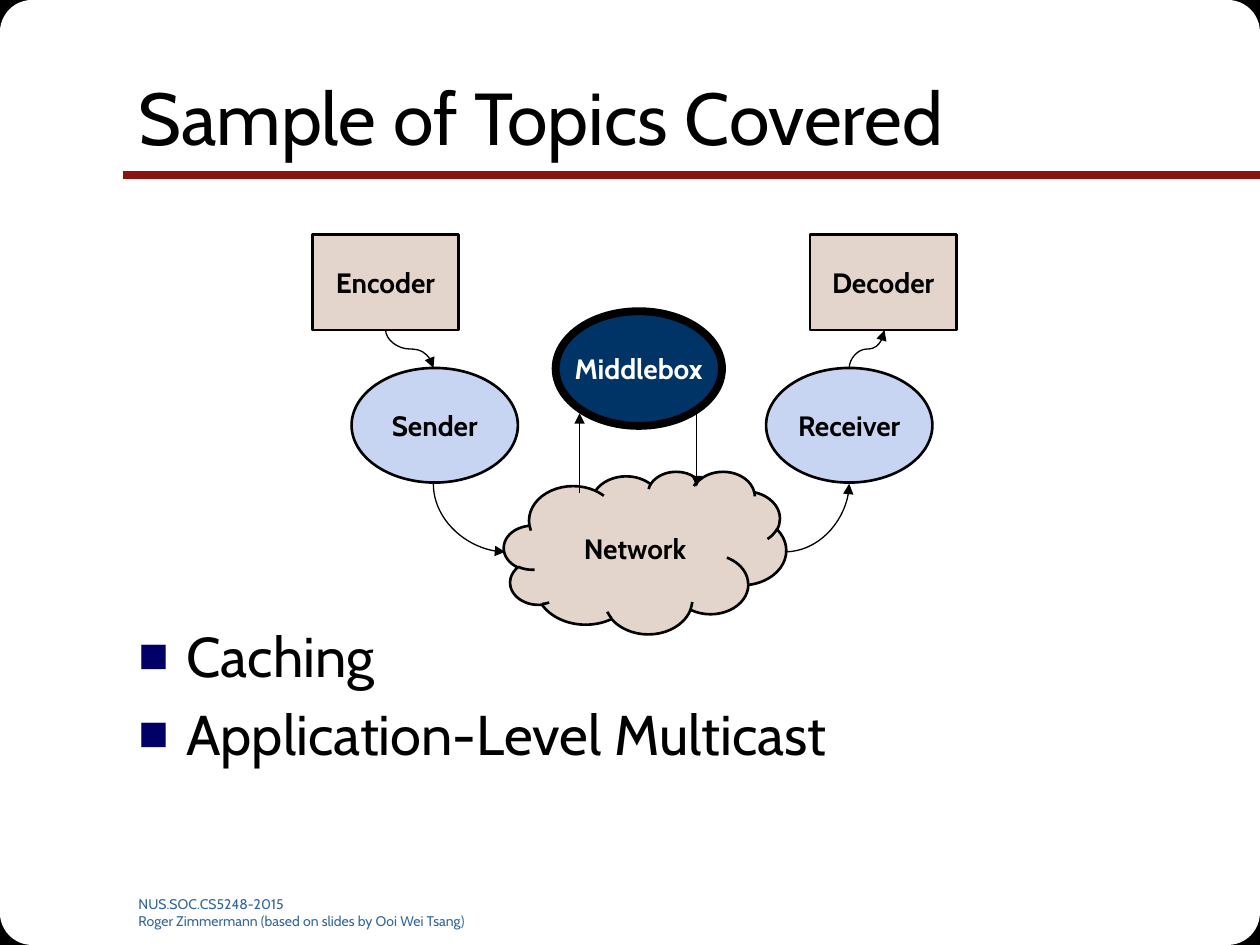
from pptx import Presentation
from pptx.dml.color import RGBColor
from pptx.enum.shapes import MSO_CONNECTOR, MSO_SHAPE
from pptx.enum.text import MSO_ANCHOR, PP_ALIGN
from pptx.oxml.ns import qn
from pptx.util import Emu, Inches, Pt
from lxml import etree

RECT, ROUND = MSO_SHAPE.RECTANGLE, MSO_SHAPE.ROUNDED_RECTANGLE
OVAL, CLOUD = MSO_SHAPE.OVAL, MSO_SHAPE.CLOUD
STRAIGHT, CURVE = MSO_CONNECTOR.STRAIGHT, MSO_CONNECTOR.CURVE
MIDDLE, TOP, CENTER = MSO_ANCHOR.MIDDLE, MSO_ANCHOR.TOP, PP_ALIGN.CENTER

COLS, ROWS = 10, 7.5
BLACK, WHITE, RED = "000000", "FFFFFF", "891411"
SAND, SKY, NAVY = "E3D4CC", "C7D5F2", "003366"
FOOTER, BULLET = "336699", "000066"


def rgb(value):
    return RGBColor.from_string(value)


class Deck:
    """Holds the style and the current slide; lengths are grid units."""
    font = "Cabin"

    def __init__(self, prs):
        self.s = prs.slides.add_slide(prs.slide_layouts[6])
        self.unit = prs.slide_width / COLS

    def grid(self, *lengths):
        return [Emu(round(n * self.unit)) for n in lengths]

    def style(self, tf, size, color, bold=False):
        for p in tf.paragraphs:
            for r in p.runs:
                r.font.name, r.font.size = self.font, Pt(size)
                r.font.bold, r.font.color.rgb = bold, rgb(color)

    def shape(self, kind, box, fill, line=None, text="", color=BLACK, width=1.5):
        sp = self.s.shapes.add_shape(kind, *self.grid(*box))
        sp.shadow.inherit = False
        sp.fill.solid()
        sp.fill.fore_color.rgb = rgb(fill)
        if line:
            sp.line.color.rgb, sp.line.width = rgb(line), Pt(width)
        else:
            sp.line.fill.background()
        if text:
            tf = sp.text_frame
            tf.text, tf.word_wrap, tf.vertical_anchor = text, False, MIDDLE
            tf.paragraphs[0].alignment = CENTER
            self.style(tf, 16, color, bold=True)
        return sp

    def text(self, box, text, size, color=BLACK, anchor=TOP):
        tf = self.s.shapes.add_textbox(*self.grid(*box)).text_frame
        tf.word_wrap, tf.vertical_anchor, tf.text = True, anchor, text
        self.style(tf, size, color)
        return tf

    def bullets(self, box, items, size):
        tf = self.text(box, "\n".join(items), size)
        for p in tf.paragraphs:
            p.space_before = Pt(size * 0.2)
            pPr = p._p.get_or_add_pPr()
            indent = Inches(0.38)
            pPr.set("marL", str(indent))
            pPr.set("indent", str(-indent))
            clr = etree.SubElement(pPr, qn("a:buClr"))
            etree.SubElement(clr, qn("a:srgbClr"), val=BULLET)
            etree.SubElement(pPr, qn("a:buSzPct"), val="90000")
            etree.SubElement(pPr, qn("a:buFont"), typeface="Arial")
            etree.SubElement(pPr, qn("a:buChar"), char="■")

    def line(self, start, end, color=BLACK, width=0.75, kind=STRAIGHT, arrow=True):
        c = self.s.shapes.add_connector(kind, *self.grid(*start, *end))
        c.line.color.rgb, c.line.width = rgb(color), Pt(width)
        etree.SubElement(c._element.spPr, qn("a:effectLst"))
        if arrow:
            etree.SubElement(c.line._get_or_add_ln(), qn("a:tailEnd"), type="triangle")
        return c

    def curve(self, start, end, bends, vertical=True):
        """Curved arrow; a vertical one leaves its start up or down."""
        c = self.line(start, end, kind=CURVE)
        spPr = c._element.spPr
        spPr.find(qn("a:prstGeom")).set("prst", f"curvedConnector{bends}")
        if vertical:
            # Turn the frame a quarter about its centre
            (x1, y1), (x2, y2) = start, end
            w, h = abs(y2 - y1), abs(x2 - x1)
            left, top = (x1 + x2 - w) / 2, (y1 + y2 - h) / 2
            c.left, c.top, c.width, c.height = self.grid(left, top, w, h)
            xfrm = spPr.find(qn("a:xfrm"))
            xfrm.set("rot", "16200000")
            xfrm.set("flipH", "1" if y2 > y1 else "0")
            xfrm.set("flipV", "0")


def main():
    prs = Presentation()
    prs.slide_width, prs.slide_height = Inches(COLS), Inches(ROWS)
    d = Deck(prs)

    # Black corners, rounded off in white
    for kind, size, fill, line in ((RECT, 0.43, BLACK, BLACK), (ROUND, 1.53, WHITE, None)):
        for x in (0, COLS - size):
            for y in (0, ROWS - size):
                d.shape(kind, (x, y, size, size), fill, line, width=0.75)

    # Title, rule, footer and topics
    d.line((10, 1.39), (0.98, 1.39), RED, 4.5, arrow=False)
    d.text((1, 7.06, 3.08, 0.28), "NUS.SOC.CS5248-2015\n"
           "Roger Zimmermann (based on slides by Ooi Wei Tsang)", 8, FOOTER)
    d.text((1, 0.3, 8.5, 1.25), "Sample of Topics Covered", 42, anchor=MIDDLE)
    d.bullets((1, 4.88, 8.5, 2.02), ["Caching", "Application-Level Multicast"], 32)

    # Nodes of the streaming diagram
    d.shape(CLOUD, (4, 3.74, 2.24, 1.29), SAND, BLACK, "Network")
    for x, name in ((2.48, "Encoder"), (6.43, "Decoder")):
        d.shape(RECT, (x, 1.86, 1.16, 0.76), SAND, BLACK, name)
    for x, name in ((2.79, "Sender"), (6.08, "Receiver")):
        d.shape(OVAL, (x, 2.92, 1.32, 0.91), SKY, BLACK, name)
    d.shape(OVAL, (4.41, 2.47, 1.32, 0.91), NAVY, BLACK, "Middlebox", WHITE, 4.5)

    # Data flow from encoder to decoder
    d.curve((3.06, 2.62), (3.44, 2.92), 3)
    d.curve((3.44, 3.84), (4.01, 4.38), 2)
    d.line((4.6, 3.91), (4.6, 3.28))
    d.line((5.53, 3.28), (5.53, 3.86))
    d.curve((6.23, 4.38), (6.74, 3.84), 2, vertical=False)
    d.curve((6.74, 2.92), (7.02, 2.62), 3)

    prs.save("out.pptx")


if __name__ == "__main__":
    main()
